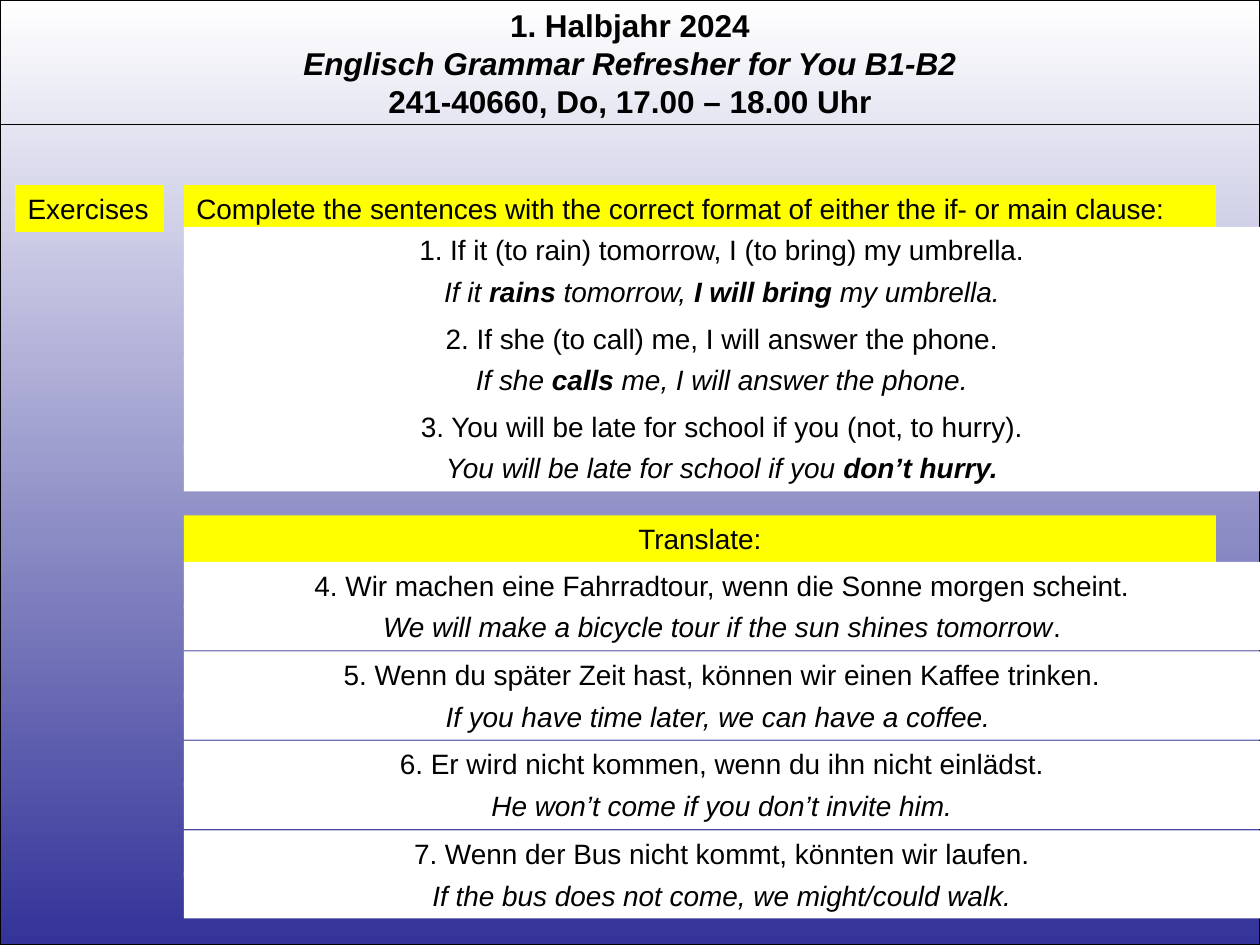
from pptx import Presentation
from pptx.dml.color import RGBColor
from pptx.enum.shapes import MSO_CONNECTOR, MSO_SHAPE
from pptx.enum.text import MSO_ANCHOR, MSO_AUTO_SIZE, PP_ALIGN
from pptx.oxml.ns import qn
from pptx.util import Inches, Pt
from lxml import etree

RECT, STRAIGHT = MSO_SHAPE.RECTANGLE, MSO_CONNECTOR.STRAIGHT
TOP, GROW = MSO_ANCHOR.TOP, MSO_AUTO_SIZE.SHAPE_TO_FIT_TEXT
LEFT, CENTER = PP_ALIGN.LEFT, PP_ALIGN.CENTER

THEME = {
    "font": "Arial",
    "title": Pt(18),
    "body": Pt(16),
    "line": Pt(0.75),
    "black": RGBColor(0, 0, 0),
    "white": RGBColor(255, 255, 255),
    "yellow": RGBColor(255, 255, 0),
    "blue": RGBColor(0x33, 0x33, 0x99),
}

PLAIN, BOLD, ITALIC, BOLD_ITALIC = "", "b", "i", "bi"

TITLE = [
    ("1. Halbjahr 2024", BOLD),
    ("Englisch Grammar Refresher for You B1-B2", BOLD_ITALIC),
    ("241-40660, Do, 17.00 – 18.00 Uhr", BOLD),
]
LABEL = "Exercises"
SECTIONS = [
    {
        "heading": "Complete the sentences with the correct format of either the if- or main clause:",
        "align": LEFT, "heading_top": 1.47, "top": 1.8, "pitch": 0.7,
        "items": [
            ("1. If it (to rain) tomorrow, I (to bring) my umbrella.",
             [("If it ", ITALIC), ("rains", BOLD_ITALIC), (" tomorrow, ", ITALIC),
              ("I will bring ", BOLD_ITALIC), ("my umbrella.", ITALIC)]),
            ("2. If she (to call) me, I will answer the phone.",
             [("If she ", ITALIC), ("calls", BOLD_ITALIC),
              (" me, I will answer the phone.", ITALIC)]),
            ("3. You will be late for school if you (not, to hurry).",
             [("You will be late for school if you ", ITALIC),
              ("don’t hurry.", BOLD_ITALIC)]),
        ],
    },
    {
        "heading": "Translate:",
        "align": CENTER, "heading_top": 4.09, "top": 4.46, "pitch": 0.71,
        "items": [
            ("4. Wir machen eine Fahrradtour, wenn die Sonne morgen scheint.",
             [("We will make a bicycle tour if the sun shines tomorrow", ITALIC),
              (".", PLAIN)]),
            ("5. Wenn du später Zeit hast, können wir einen Kaffee trinken.",
             [("If you have time later, we can have a coffee. ", ITALIC)]),
            ("6. Er wird nicht kommen, wenn du ihn nicht einlädst.",
             [("He won’t come if you don’t invite him.", ITALIC)]),
            ("7. Wenn der Bus nicht kommt, könnten wir laufen.",
             [("If the bus does not come, we might/could walk.", ITALIC)]),
        ],
    },
]

SLIDE_W, SLIDE_H = 10, 7.5
TITLE_H, RULE_Y = 1.01, 0.99
LABEL_X, LABEL_W = 0.12, 1.18
COLUMN_X, HEADING_W = 1.46, 8.19
ROW_W, ROW_H = SLIDE_W - COLUMN_X, 0.37
ANSWER_OFFSET = 0.33


def add_runs(p, runs, size, align):
    p.alignment = align
    for text, style in runs:
        r = p.add_run()
        r.text = text
        r.font.name = THEME["font"]
        r.font.size = size
        r.font.color.rgb = THEME["black"]
        r.font.bold = "b" in style
        r.font.italic = "i" in style


def add_bar(slide, x, y, w, color, runs, align):
    sp = slide.shapes.add_shape(RECT, Inches(x), Inches(y), Inches(w), Inches(ROW_H))
    sp.shadow.inherit = False
    sp.fill.solid()
    sp.fill.fore_color.rgb = color
    sp.line.fill.background()
    tf = sp.text_frame
    tf.word_wrap = True
    tf.auto_size = GROW
    tf.vertical_anchor = TOP
    add_runs(tf.paragraphs[0], runs, THEME["body"], align)


def add_backdrop(slide):
    sp = slide.shapes.add_shape(RECT, 0, 0, Inches(SLIDE_W), Inches(SLIDE_H))
    sp.shadow.inherit = False
    sp.fill.gradient()
    sp.fill.gradient_angle = 270
    for stop, color in zip(sp.fill.gradient_stops, ("white", "blue")):
        stop.color.rgb = THEME[color]
    sp.line.color.rgb = THEME["black"]
    sp.line.width = THEME["line"]


def add_title(slide):
    tf = slide.shapes.add_textbox(0, 0, Inches(SLIDE_W), Inches(TITLE_H)).text_frame
    tf.word_wrap = True
    tf.auto_size = GROW
    for i, line in enumerate(TITLE):
        p = tf.add_paragraph() if i else tf.paragraphs[0]
        add_runs(p, [line], THEME["title"], CENTER)
    rule = slide.shapes.add_connector(
        STRAIGHT, 0, Inches(RULE_Y), Inches(SLIDE_W), Inches(RULE_Y))
    rule.line.color.rgb = THEME["black"]
    rule.line.width = THEME["line"]
    etree.SubElement(rule._element.spPr, qn("a:effectLst"))


def add_section(slide, section):
    add_bar(slide, COLUMN_X, section["heading_top"], HEADING_W, THEME["yellow"],
            [(section["heading"], PLAIN)], section["align"])
    for i, (question, answer) in enumerate(section["items"]):
        y = section["top"] + i * section["pitch"]
        for top, runs in ((y, [(question, PLAIN)]), (y + ANSWER_OFFSET, answer)):
            add_bar(slide, COLUMN_X, top, ROW_W, THEME["white"], runs, CENTER)


def main():
    prs = Presentation()
    prs.slide_width, prs.slide_height = Inches(SLIDE_W), Inches(SLIDE_H)
    s = prs.slides.add_slide(prs.slide_layouts[6])
    add_backdrop(s)
    add_title(s)
    add_bar(s, LABEL_X, SECTIONS[0]["heading_top"], LABEL_W, THEME["yellow"],
            [(LABEL, PLAIN)], LEFT)
    for section in SECTIONS:
        add_section(s, section)
    prs.save("out.pptx")


if __name__ == "__main__":
    main()
